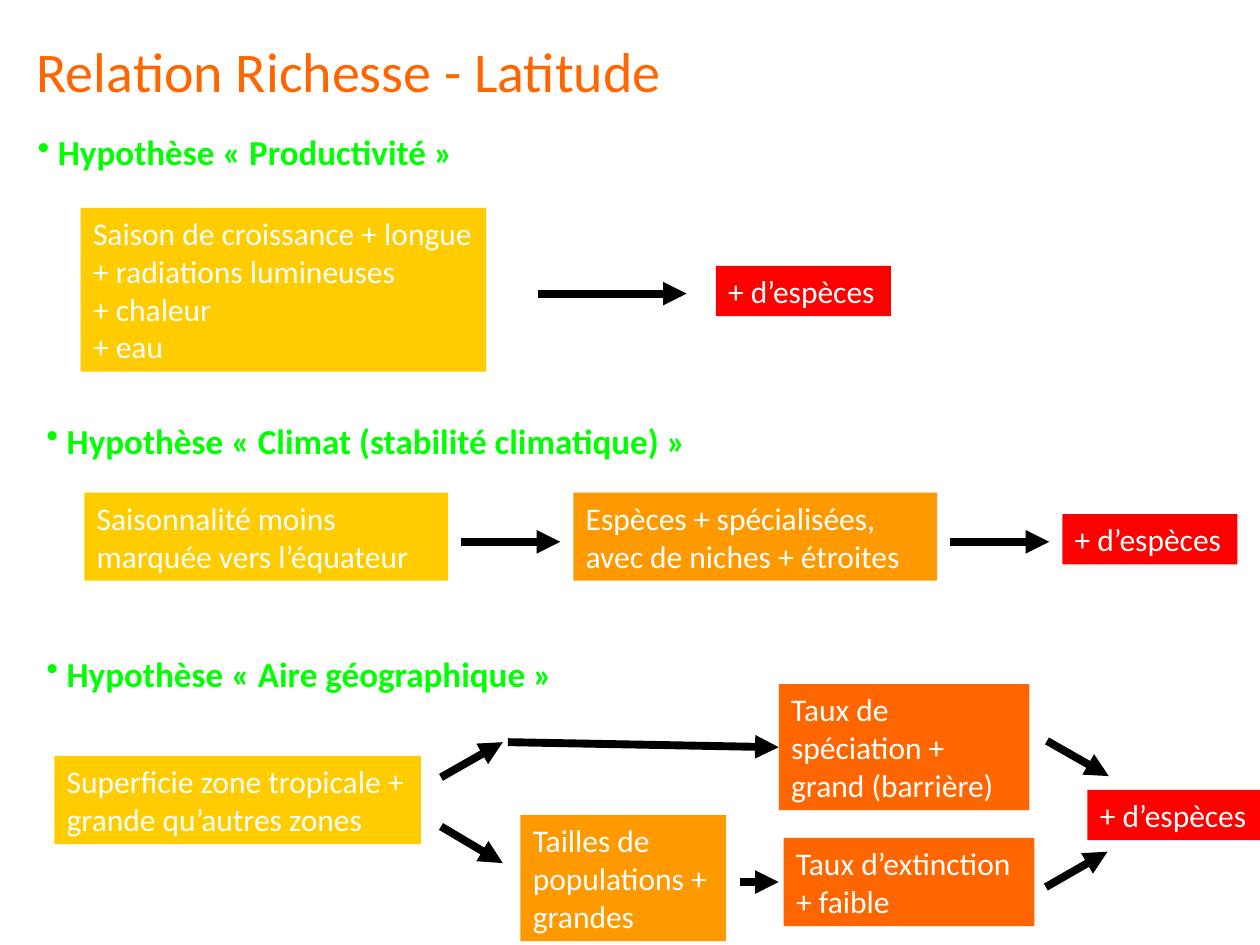
from lxml.etree import SubElement
from pptx import Presentation
from pptx.dml.color import RGBColor
from pptx.enum.shapes import MSO_CONNECTOR, MSO_SHAPE
from pptx.enum.text import MSO_ANCHOR, MSO_AUTO_SIZE, PP_ALIGN
from pptx.oxml.ns import qn
from pptx.util import Pt

WHITE = RGBColor(0xFF, 0xFF, 0xFF)
BLACK = RGBColor(0, 0, 0)
GREEN = RGBColor(0, 0xFF, 0)
YELLOW = RGBColor(0xFF, 0xCC, 0)
AMBER = RGBColor(0xFF, 0x99, 0)
ORANGE = RGBColor(0xFF, 0x66, 0)
RED = RGBColor(0xFF, 0, 0)

TITLE_FONT = {"name": "Calibri", "size": Pt(32), "bold": False}
HEADING_FONT = {"name": "Calibri", "size": Pt(20), "bold": True}
BOX_FONT = {"name": "Calibri", "size": Pt(18), "bold": False}
TITLE_FRAME = {"word_wrap": True, "auto_size": MSO_AUTO_SIZE.NONE,
               "vertical_anchor": MSO_ANCHOR.TOP}
GROW_FRAME = {"auto_size": MSO_AUTO_SIZE.SHAPE_TO_FIT_TEXT,
              "vertical_anchor": MSO_ANCHOR.TOP}


def set_attrs(obj, values):
    """Set each attribute of obj named in values."""
    for name, value in values.items():
        setattr(obj, name, value)


def write(tf, text, frame, font, color):
    """Fill a text frame with left-aligned paragraphs."""
    tf.text = text
    set_attrs(tf, frame)
    for p in tf.paragraphs:
        p.alignment = PP_ALIGN.LEFT
        for r in p.runs:
            set_attrs(r.font, font)
            r.font.color.rgb = color


def add_title(s, left, top, width, height):
    """Place the slide title."""
    sp = s.shapes.title
    set_attrs(sp, {"left": Pt(left), "top": Pt(top),
                   "width": Pt(width), "height": Pt(height)})
    write(sp.text_frame, "Relation Richesse - Latitude",
          TITLE_FRAME, TITLE_FONT, ORANGE)


def add_heading(s, left, top, width, text):
    """Place a bulleted hypothesis heading."""
    sp = s.shapes.add_textbox(Pt(left), Pt(top), Pt(width), Pt(31))
    write(sp.text_frame, text, {**GROW_FRAME, "word_wrap": False},
          HEADING_FONT, GREEN)
    pPr = sp.text_frame.paragraphs[0]._p.get_or_add_pPr()
    SubElement(pPr, qn("a:buFontTx"))
    SubElement(pPr, qn("a:buChar"), char="•")


def add_box(s, left, top, width, height, text, color, wrap=True):
    """Place a filled rectangle with white text."""
    sp = s.shapes.add_shape(MSO_SHAPE.RECTANGLE, Pt(left), Pt(top),
                            Pt(width), Pt(height))
    sp.shadow.inherit = False
    sp.fill.solid()
    sp.fill.fore_color.rgb = color
    sp.line.fill.background()
    write(sp.text_frame, text, {**GROW_FRAME, "word_wrap": wrap},
          BOX_FONT, WHITE)
    return sp


def add_result(s, left, top):
    """Place the red box that ends each chain."""
    add_box(s, left, top, 100.1, 28.8, "+ d’espèces", RED, wrap=False)


def add_arrow(s, x1, y1, x2, y2):
    """Place a thick black arrow."""
    line = s.shapes.add_connector(MSO_CONNECTOR.STRAIGHT, Pt(x1), Pt(y1),
                                  Pt(x2), Pt(y2))
    line.line.width = Pt(4.5)
    line.line.color.rgb = BLACK
    SubElement(line.line._get_or_add_ln(), qn("a:tailEnd"), type="triangle")
    SubElement(line._element.spPr, qn("a:effectLst"))
    return line


def add_productivity(s, left, top):
    """Place the productivity hypothesis."""
    add_heading(s, left, top, 254.9, " Hypothèse « Productivité »")
    add_box(s, left + 31.7, top + 47.5, 231.8, 93.6,
            "Saison de croissance + longue\n+ radiations lumineuses\n"
            "+ chaleur\n+ eau", YELLOW, wrap=False)
    add_arrow(s, left + 293, top + 96.5, left + 378, top + 96.5)
    add_result(s, left + 394.6, top + 80.6)


def add_climate(s, left, top):
    """Place the climate stability hypothesis."""
    add_heading(s, left, top, 383,
                " Hypothèse « Climat (stabilité climatique) »")
    steps = [(28.8, "Saisonnalité moins marquée vers l’équateur", YELLOW),
             (308.2, "Espèces + spécialisées, avec de niches + étroites", AMBER)]
    for dx, text, color in steps:
        x = left + dx
        add_box(s, x, top + 45.3, 208, 50.4, text, color)
        add_arrow(s, x + 215, top + 73.4, x + 272, top + 73.4)
    add_result(s, left + 587.6, top + 57.6)


def add_area(s, left, top):
    """Place the geographic area hypothesis with its two branches."""
    add_heading(s, left, top, 307.4, " Hypothèse « Aire géographique »")
    boxes = [
        (11.6, 62.6, 209.5, 50.4,
         "Superficie zone tropicale + grande qu’autres zones", YELLOW),
        (278, 96.4, 117.4, 72, "Tailles de populations + grandes", AMBER),
        (428.4, 109.4, 143.3, 50.4, "Taux d’extinction + faible", ORANGE),
        (425.6, 21.6, 143.3, 72, "Taux de spéciation + grand (barrière)", ORANGE),
    ]
    for dx, dy, width, height, text, color in boxes:
        speciation = add_box(s, left + dx, top + dy, width, height, text, color)
    add_result(s, left + 602, top + 82)
    arrows = [
        (232.6, 74.8, 267.9, 54.7),
        (232.6, 102.9, 267.9, 123.8),
        (403.2, 134.6, 425.6, 134.6),
        (578.9, 54, 614.2, 74.1),
        (578.2, 137.5, 613.5, 117.3),
        (270.8, 54.7, 425.6, 57.6),
    ]
    for x1, y1, x2, y2 in arrows:
        line = add_arrow(s, left + x1, top + y1, left + x2, top + y2)
    line.end_connect(speciation, 1)


def main():
    """Build the slide and save it."""
    prs = Presentation()
    set_attrs(prs, {"slide_width": Pt(720), "slide_height": Pt(540)})
    s = prs.slides.add_slide(prs.slide_layouts[5])
    add_title(s, 13.7, 17.3, 623.5, 59)
    add_productivity(s, 14.4, 71.3)
    add_climate(s, 19.4, 236.2)
    add_area(s, 19.4, 369.4)
    prs.save("out.pptx")


if __name__ == "__main__":
    main()
